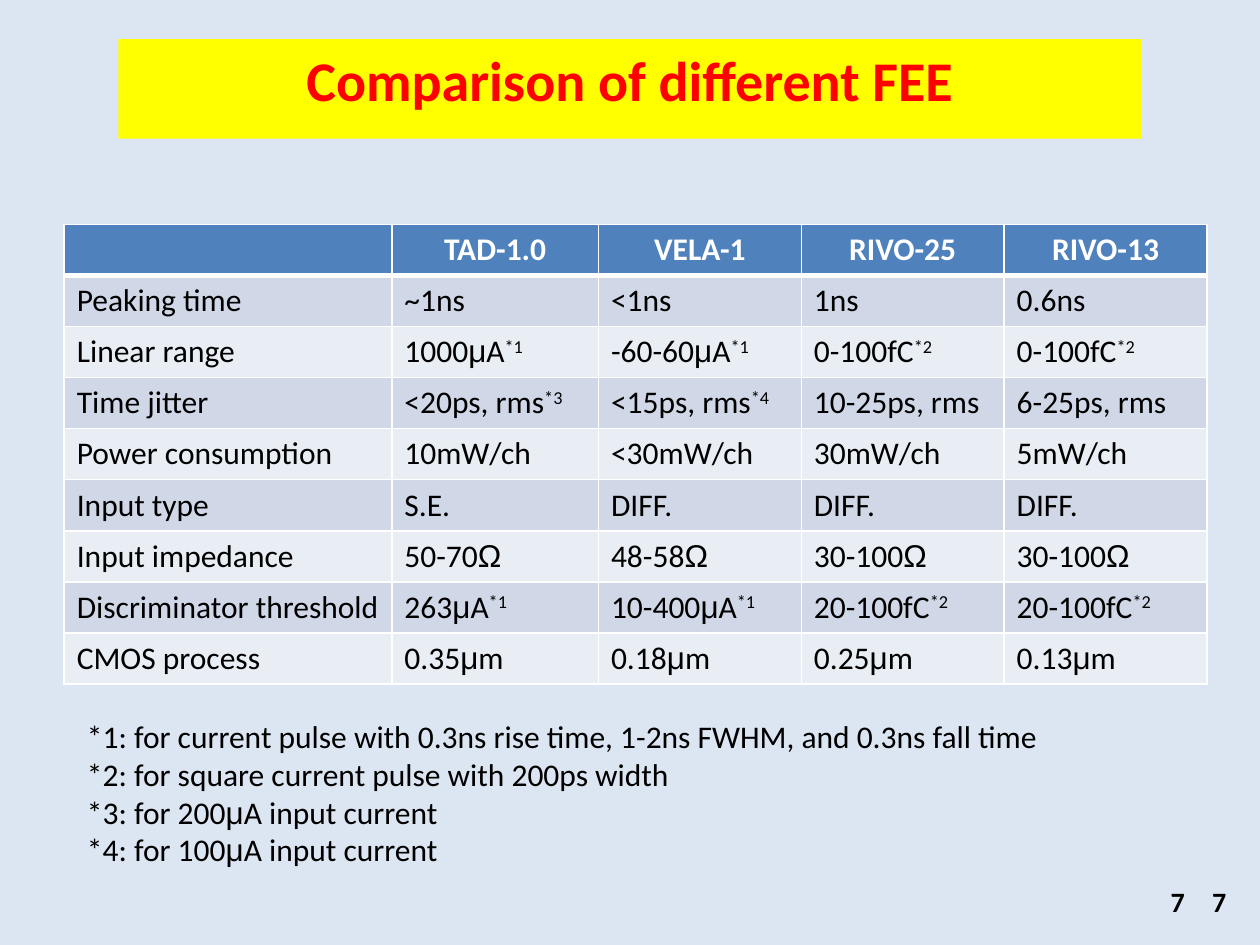
from itertools import groupby

from lxml import etree
from pptx import Presentation
from pptx import util as u
from pptx.dml.color import RGBColor
from pptx.enum import text
from pptx.oxml import ns

TITLE = "Comparison of different FEE"
HEADER = ("", "TAD-1.0", "VELA-1", "RIVO-25", "RIVO-13")
ROWS = [
    ("Peaking time", "~1ns", "<1ns", "1ns", "0.6ns"),
    ("Linear range", "1000μA*1", "-60-60μA*1", "0-100fC*2", "0-100fC*2"),
    ("Time jitter", "<20ps, rms*3", "<15ps, rms*4", "10-25ps, rms", "6-25ps, rms"),
    ("Power consumption", "10mW/ch", "<30mW/ch", "30mW/ch", "5mW/ch"),
    ("Input type", "S.E.", "DIFF.", "DIFF.", "DIFF."),
    ("Input impedance", "50-70Ω", "48-58Ω", "30-100Ω", "30-100Ω"),
    ("Discriminator threshold", "263μA*1", "10-400μA*1", "20-100fC*2", "20-100fC*2"),
    ("CMOS process", "0.35μm", "0.18μm", "0.25μm", "0.13μm"),
]
FOOTNOTES = [
    "*1: for current pulse with 0.3ns rise time, 1-2ns FWHM, and 0.3ns fall time",
    "*2: for square current pulse with 200ps width",
    "*3: for 200μA input current",
    "*4: for 100μA input current",
]
PAGE_NUMBER = "7"

THEME = {
    "background": "DCE6F2", "banner": "FFFF00", "header": "4F81BD",
    "bands": ("D0D8E8", "E9EDF4"), "border": "FFFFFF",
    "font": "Calibri", "symbol_font": "Arial", "superscript": "30000",
    "title": {"size": 32, "bold": True, "color": "FF0000"},
    "heading": {"size": 18, "bold": True, "color": "FFFFFF"},
    "body": {"size": 18, "bold": False, "color": "000000"},
    "number": {"size": 16, "bold": True, "color": "000000"},
}
TITLE_BOX = (0.94, 0.31, 8.12, 0.79)
TABLE_BOX = (0.51, 1.78, 9.06, 3.65)
COLUMN_WIDTHS = (2.6, 1.64, 1.61, 1.61, 1.61)
FOOTNOTE_BOX = (0.59, 5.64, 8.66, 1.31)
NUMBER_BOXES = [(7.5, 6.95, 2.33, 0.4), (8.98, 6.95, 0.52, 0.4)]
THIN, THICK = 1, 3


def apply(target, values):
    for name, value in values.items():
        setattr(target, name, value)


def place(shape, box):
    apply(shape, dict(zip(("left", "top", "width", "height"), map(u.Inches, box))))


def paint(fill, color):
    fill.solid()
    fill.fore_color.rgb = RGBColor.from_string(color)


def write(paragraph, content, style, align, superscript=""):
    paragraph.alignment = align
    pieces = [(symbol, "".join(letters))
              for symbol, letters in groupby(content, lambda letter: letter in "μΩ")]
    for symbol, piece in pieces + [(False, superscript)]:
        if not piece:
            continue
        run = paragraph.add_run()
        run.text = piece
        apply(run.font, {
            "name": THEME["symbol_font" if symbol else "font"],
            "size": u.Pt(style["size"]), "bold": style["bold"],
        })
        run.font.color.rgb = RGBColor.from_string(style["color"])
        if piece == superscript:
            run.font._element.set("baseline", THEME["superscript"])


def add_borders(cell, widths):
    properties = cell._tc.get_or_add_tcPr()
    for side, width in zip("LRTB", widths):
        line = etree.SubElement(properties, ns.qn("a:ln" + side), w=str(u.Pt(width)))
        fill = etree.SubElement(line, ns.qn("a:solidFill"))
        etree.SubElement(fill, ns.qn("a:srgbClr"), val=THEME["border"])


def add_title(slide):
    title = slide.shapes.title
    place(title, TITLE_BOX)
    paint(title.fill, THEME["banner"])
    apply(title.text_frame, {"vertical_anchor": text.MSO_ANCHOR.TOP,
                             "auto_size": text.MSO_AUTO_SIZE.NONE})
    write(title.text_frame.paragraphs[0], TITLE, THEME["title"], text.PP_ALIGN.CENTER)


def add_comparison(slide):
    records = [HEADER] + ROWS
    frame = slide.shapes.add_table(len(records), len(HEADER), *map(u.Inches, TABLE_BOX))
    table = frame.table
    for column, width in zip(table.columns, COLUMN_WIDTHS):
        column.width = u.Inches(width)
    for row, record in enumerate(records):
        table.rows[row].height = u.Inches(TABLE_BOX[3] / len(records))
        heading = row == 0
        top, bottom = THICK if row == 1 else THIN, THICK if heading else THIN
        for column, content in enumerate(record):
            cell = table.cell(row, column)
            add_borders(cell, (THIN, THIN, top, bottom))
            paint(cell.fill, THEME["header"] if heading else THEME["bands"][(row - 1) % 2])
            value, star, note = content.partition("*")
            write(cell.text_frame.paragraphs[0], value,
                  THEME["heading" if heading else "body"],
                  text.PP_ALIGN.CENTER if heading else text.PP_ALIGN.LEFT, star + note)


def add_footnotes(slide):
    body = slide.placeholders[1]
    place(body, FOOTNOTE_BOX)
    frame = body.text_frame
    frame.auto_size = text.MSO_AUTO_SIZE.NONE
    for index, note in enumerate(FOOTNOTES):
        paragraph = frame.add_paragraph() if index else frame.paragraphs[0]
        write(paragraph, note, THEME["body"], text.PP_ALIGN.LEFT)
        paragraph.space_before = u.Pt(0)
        properties = paragraph._p.get_or_add_pPr()
        for name in ("marL", "indent"):
            properties.set(name, "0")
        etree.SubElement(properties, ns.qn("a:buNone"))


def add_page_numbers(slide):
    for box in NUMBER_BOXES:
        frame = slide.shapes.add_textbox(*map(u.Inches, box)).text_frame
        apply(frame, {"word_wrap": True, "vertical_anchor": text.MSO_ANCHOR.MIDDLE})
        write(frame.paragraphs[0], PAGE_NUMBER, THEME["number"], text.PP_ALIGN.RIGHT)


def main():
    presentation = Presentation()
    apply(presentation, {"slide_width": u.Inches(10), "slide_height": u.Inches(7.5)})
    slide = presentation.slides.add_slide(presentation.slide_layouts[1])
    paint(slide.background.fill, THEME["background"])
    for add_part in (add_page_numbers, add_title, add_comparison, add_footnotes):
        add_part(slide)
    presentation.save("out.pptx")


if __name__ == "__main__":
    main()
